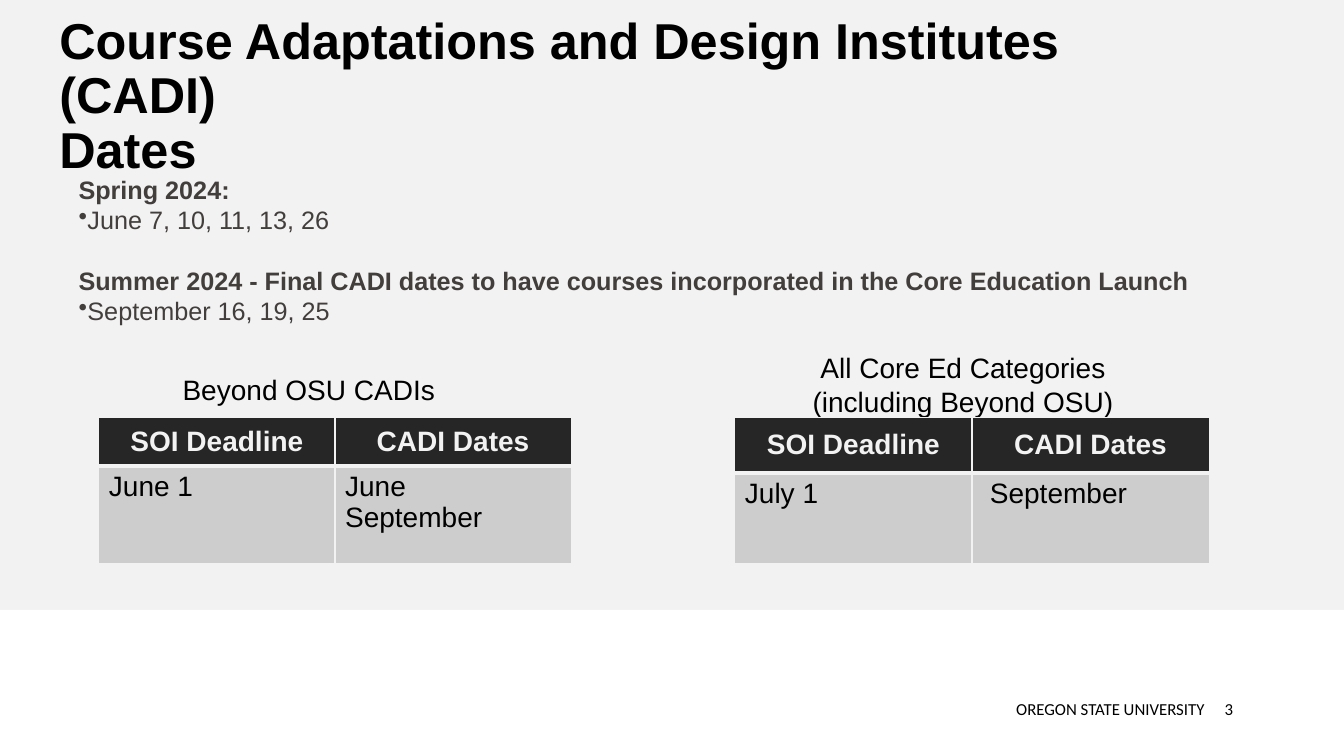
from dataclasses import dataclass

from lxml import etree
from pptx import Presentation
from pptx.dml.color import RGBColor
from pptx.enum.shapes import MSO_SHAPE
from pptx.enum.text import MSO_ANCHOR, PP_ALIGN
from pptx.oxml.ns import qn
from pptx.util import Pt

LEFT, MID, RIGHT = PP_ALIGN.LEFT, PP_ALIGN.CENTER, PP_ALIGN.RIGHT
TOP, CENTER = MSO_ANCHOR.TOP, MSO_ANCHOR.MIDDLE
RECT = MSO_SHAPE.RECTANGLE


@dataclass(frozen=True)
class Theme:
    font: str = "Arial"
    foot_font: str = "Calibri"
    back: str = "F2F2F2"
    white: str = "FFFFFF"
    black: str = "000000"
    gray: str = "423E3C"
    head: str = "262626"
    body: str = "CDCDCD"
    title: int = 36
    table: int = 20
    dates: int = 18
    foot: int = 12


THEME = Theme()


def color(code):
    return RGBColor.from_string(code)


def style(para, size, tint, bold=False, align=LEFT, font=THEME.font):
    para.alignment = align
    para.font.name = font
    para.font.size = Pt(size)
    para.font.bold = bold
    para.font.color.rgb = color(tint)


def add_text(slide, box, lines, size, tint, bold=False, align=LEFT,
             anchor=TOP, font=THEME.font):
    frame = slide.shapes.add_textbox(*map(Pt, box)).text_frame
    frame.word_wrap = True
    frame.vertical_anchor = anchor
    frame.text = "\n".join(lines)
    for para in frame.paragraphs:
        style(para, size, tint, bold, align, font)
    return frame


def add_title(slide, box):
    words = "Course Adaptations and Design Institutes (CADI)\vDates"
    frame = add_text(slide, box, [words], THEME.title, THEME.black, True,
                     anchor=CENTER)
    frame.paragraphs[0].line_spacing = 0.9


def add_dates(slide, box, terms):
    frame = slide.shapes.add_textbox(*map(Pt, box)).text_frame
    frame.word_wrap = True
    for i, (term, days) in enumerate(terms):
        head = frame.add_paragraph() if i else frame.paragraphs[0]
        head.text = term
        if i:
            head.space_before = Pt(21.6)
        style(head, THEME.dates, THEME.gray, True)
        item = frame.add_paragraph()
        item.text = days
        props = item._p.get_or_add_pPr()
        props.set("marL", "0")
        props.set("indent", "0")
        etree.SubElement(props, qn("a:buChar"), char="•")
        style(item, THEME.dates, THEME.gray)


def add_edges(cell, widths):
    props = cell._tc.get_or_add_tcPr()
    for side, width in zip("LRTB", widths):
        line = etree.SubElement(props, qn("a:ln" + side), w=str(Pt(width)))
        fill = etree.SubElement(line, qn("a:solidFill"))
        etree.SubElement(fill, qn("a:srgbClr"), val=THEME.back)


def fill_cell(cell, text, head):
    add_edges(cell, (1, 1, 1, 3) if head else (1, 1, 3, 1))
    cell.fill.solid()
    cell.fill.fore_color.rgb = color(THEME.head if head else THEME.body)
    cell.vertical_anchor = CENTER if head else TOP
    cell.text = text
    for para in cell.text_frame.paragraphs:
        style(para, THEME.table, THEME.back if head else THEME.black,
              head, MID if head else LEFT)


def add_plan(slide, box, label, lines, top, row, due, months, inset=7.2):
    x, y, w, h = box
    add_text(slide, (x + label, y - top, 300, top), lines, THEME.table,
             THEME.black, align=MID)
    grid = slide.shapes.add_table(2, 2, *map(Pt, box)).table
    for col in grid.columns:
        col.width = Pt(w / 2)
    for part, high in zip(grid.rows, (row, h - row)):
        part.height = Pt(high)
    for r, texts in enumerate((("SOI Deadline", "CADI Dates"), (due, months))):
        for c, text in enumerate(texts):
            fill_cell(grid.cell(r, c), text, r == 0)
    grid.cell(1, 1).margin_left = Pt(inset)


def add_footer(slide, box):
    x, y, w, h = box
    band = slide.shapes.add_shape(RECT, *map(Pt, box))
    band.shadow.inherit = False
    band.fill.solid()
    band.fill.fore_color.rgb = color(THEME.white)
    band.line.fill.background()
    split = x + 867.6
    for left, wide, text, align in (
            (split - 526.3, 526.3, "OREGON STATE UNIVERSITY", RIGHT),
            (split, 49.7, "3", LEFT)):
        add_text(slide, (left, y + 56.2, wide, 28.8), [text], THEME.foot,
                 THEME.black, align=align, anchor=CENTER,
                 font=THEME.foot_font)


def main():
    deck = Presentation()
    deck.slide_width, deck.slide_height = Pt(960), Pt(540)
    slide = deck.slides.add_slide(deck.slide_layouts[6])
    slide.background.fill.solid()
    slide.background.fill.fore_color.rgb = color(THEME.back)
    add_footer(slide, (0, 435.6, 960, 104.4))
    add_title(slide, (35.3, 17.3, 828, 104.4))
    add_plan(slide, (70.6, 298.1, 337.4, 104.4), 0, ["Beyond OSU CADIs"],
             35.3, 34.6, "June 1", "June\nSeptember")
    add_plan(slide, (524.9, 298.1, 338.8, 104.4), 13,
             ["All Core Ed Categories", "(including Beyond OSU)"],
             51.1, 39.6, "July 1", "September", 12.8)
    add_dates(slide, (49, 121, 814.3, 116.6), [
        ("Spring 2024:", "June 7, 10, 11, 13, 26"),
        ("Summer 2024 - Final CADI dates to have courses incorporated in "
         "the Core Education Launch", "September 16, 19, 25")])
    deck.save("out.pptx")


if __name__ == "__main__":
    main()
